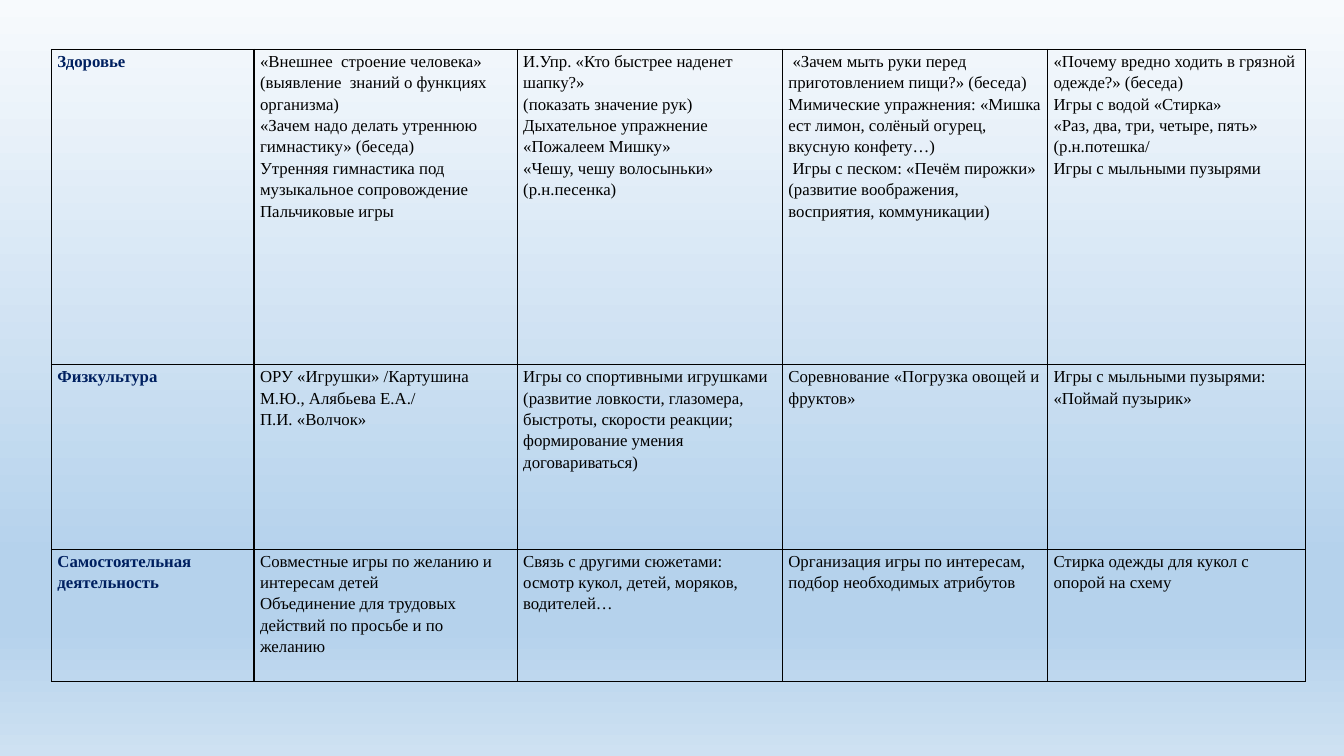
"""Build a slide with a table of children's activities by area."""
from lxml.etree import SubElement
from pptx import Presentation
from pptx.dml.color import RGBColor
from pptx.oxml.ns import qn
from pptx.util import Inches, Pt

BACKDROP = [(0, "F7FAFD"), (74, "B5D2EC"), (83, "B5D2EC"), (100, "CEE1F2")]
COLUMN_WIDTHS = [2.01, 2.61, 2.63, 2.63, 2.56]
ROW_HEIGHTS = [3.13, 1.83, 1.31]
ACTIVITIES = [
    [
        ["Здоровье"],
        ["«Внешнее  строение человека» (выявление  знаний о функциях организма)",
         "«Зачем надо делать утреннюю гимнастику» (беседа)",
         "Утренняя гимнастика под музыкальное сопровождение",
         "Пальчиковые игры"],
        ["И.Упр. «Кто быстрее наденет шапку?»",
         "(показать значение рук)",
         "Дыхательное упражнение «Пожалеем Мишку»",
         "«Чешу, чешу волосыньки» (р.н.песенка)"],
        [" «Зачем мыть руки перед приготовлением пищи?» (беседа)",
         "Мимические упражнения: «Мишка ест лимон, солёный огурец, вкусную конфету…)",
         " Игры с песком: «Печём пирожки» (развитие воображения, восприятия, коммуникации)"],
        ["«Почему вредно ходить в грязной одежде?» (беседа)",
         "Игры с водой «Стирка»",
         "«Раз, два, три, четыре, пять» (р.н.потешка/",
         "Игры с мыльными пузырями"],
    ],
    [
        ["Физкультура"],
        ["ОРУ «Игрушки» /Картушина М.Ю., Алябьева Е.А./",
         "П.И. «Волчок»"],
        ["Игры со спортивными игрушками (развитие ловкости, глазомера, "
         "быстроты, скорости реакции; формирование умения договариваться)"],
        ["Соревнование «Погрузка овощей и фруктов»"],
        ["Игры с мыльными пузырями: «Поймай пузырик»"],
    ],
    [
        ["Самостоятельная деятельность"],
        ["Совместные игры по желанию и интересам детей",
         "Объединение для трудовых действий по просьбе и по желанию"],
        ["Связь с другими сюжетами: осмотр кукол, детей, моряков, водителей…"],
        ["Организация игры по интересам, подбор необходимых атрибутов"],
        ["Стирка одежды для кукол с опорой на схему"],
    ],
]


def add_solid_color(parent, color):
    SubElement(parent, qn("a:srgbClr"), val=color)


def add_borders(cell, color):
    properties = cell._tc.get_or_add_tcPr()
    for side in ("a:lnL", "a:lnR", "a:lnT", "a:lnB"):
        border = SubElement(properties, qn(side), w=str(Pt(1)))
        add_solid_color(SubElement(border, qn("a:solidFill")), color)


presentation = Presentation()
presentation.slide_width = Inches(13.33)
presentation.slide_height = Inches(7.5)
slide = presentation.slides.add_slide(presentation.slide_layouts[6])

backdrop = slide.background.fill
backdrop.gradient()
backdrop.gradient_angle = 270
stops = slide.element.find(".//" + qn("a:gsLst"))
for stop in list(stops):
    stops.remove(stop)
for percent, color in BACKDROP:
    add_solid_color(SubElement(stops, qn("a:gs"), pos=str(percent * 1000)), color)

plan = slide.shapes.add_table(
    len(ROW_HEIGHTS), len(COLUMN_WIDTHS), Inches(0.51), Inches(0.49),
    Inches(sum(COLUMN_WIDTHS)), Inches(sum(ROW_HEIGHTS))).table
plan.first_row = False
plan.horz_banding = False
for column, width in zip(plan.columns, COLUMN_WIDTHS):
    column.width = Inches(width)
for row, height in zip(plan.rows, ROW_HEIGHTS):
    row.height = Inches(height)

for row, areas in zip(plan.rows, ACTIVITIES):
    for index, (cell, lines) in enumerate(zip(row.cells, areas)):
        add_borders(cell, "000000")
        cell.fill.background()
        cell.margin_left = cell.margin_right = Inches(0.06)
        cell.margin_top = cell.margin_bottom = Inches(0)
        cell.text_frame.text = "\n".join(lines)
        for paragraph in cell.text_frame.paragraphs:
            paragraph.line_spacing = 1.15
            font = paragraph.runs[0].font
            font.name = "Times New Roman"
            font.size = Pt(12)
            font.bold = index == 0
            font.color.rgb = RGBColor.from_string("002060" if index == 0 else "000000")

presentation.save("out.pptx")
